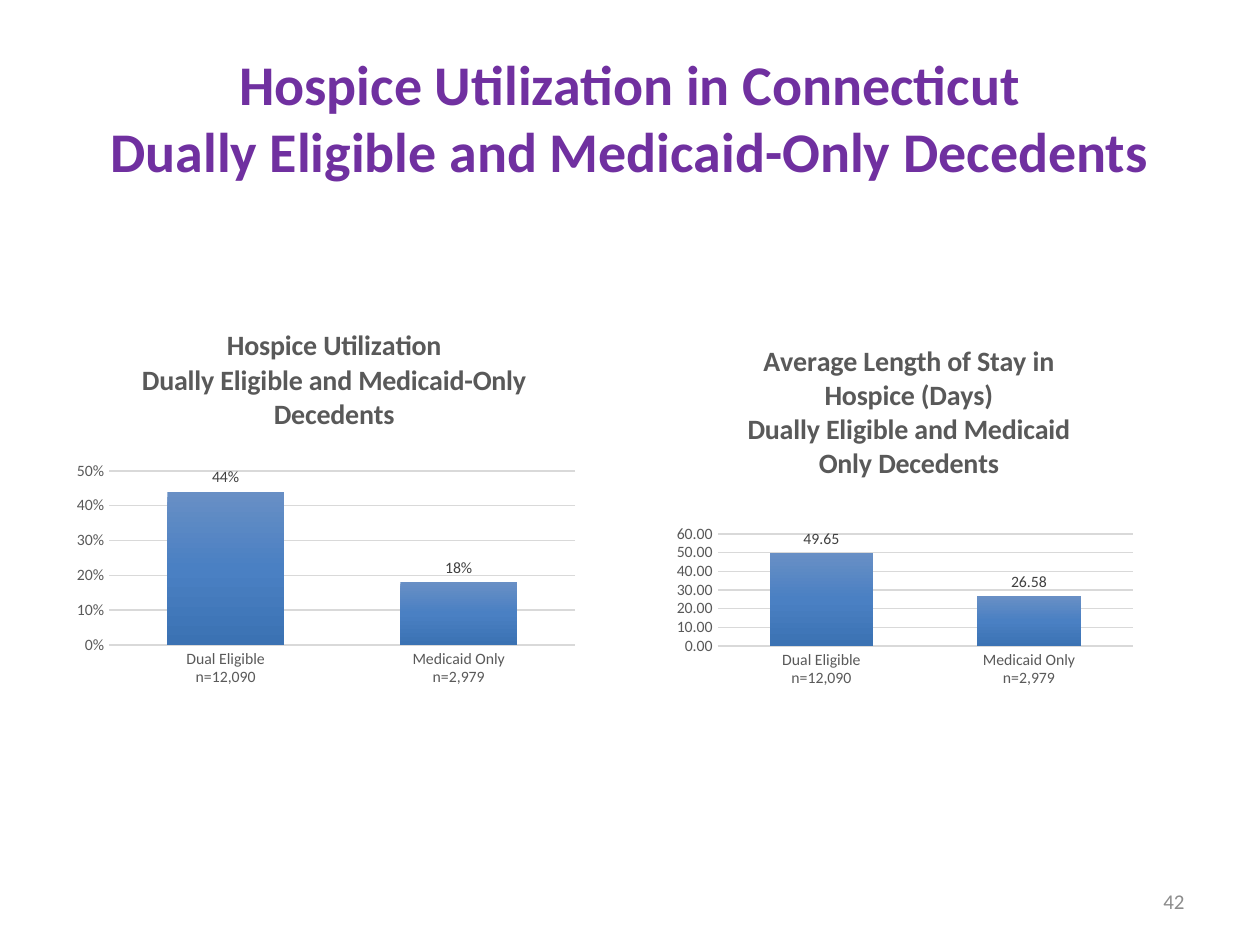
from dataclasses import dataclass
from typing import Any

import lxml.etree
import pptx
import pptx.chart.data
import pptx.dml.color
import pptx.enum.chart
import pptx.enum.text
import pptx.oxml
import pptx.oxml.ns
import pptx.util

FONT = "Calibri"
GRID_COLOUR = "D9D9D9"
AXIS_COLOUR = "595959"
CATEGORIES = ["Dual Eligible\nn=12,090", "Medicaid Only\nn=2,979"]
BAR_GRADIENT = [(0, "688FC5"), (50, "4A80C3"), (100, "3B72B3")]

Box = tuple[float, float, float, float]


@dataclass
class BarChart:
    box: Box  # points
    title: list[str]
    values: list[float]
    number_format: str
    maximum: float
    step: float
    title_place: dict[str, float]  # fractions of the chart
    plot_place: dict[str, float]


CHARTS = [
    BarChart((37.44, 166.32, 296.64, 231.12),
             ["Hospice Utilization", "Dually Eligible and Medicaid-Only Decedents"],
             [0.44, 0.18], "0%", 0.5, 0.1,
             {"x": 0.14, "y": 0.08}, {"x": 0.084, "y": 0.445, "w": 0.898, "h": 0.43}),
    BarChart((381.6, 182.88, 271.44, 214.56),
             ["Average Length of Stay in Hospice (Days)",
              "Dually Eligible and Medicaid Only Decedents"],
             [49.65, 26.58], "0.00", 60, 10,
             {"x": 0.16, "y": 0.05}, {"x": 0.105, "y": 0.57, "w": 0.874, "h": 0.298}),
]


def colour(value: str) -> pptx.dml.color.RGBColor:
    return pptx.dml.color.RGBColor.from_string(value)


def set_values(target: Any, values: dict[str, Any]) -> None:
    for name, value in values.items():
        setattr(target, name, value)


def set_font(font: Any, size: float, hex_colour: str, bold: bool = False) -> None:
    set_values(font, {"name": FONT, "size": pptx.util.Pt(size), "bold": bold})
    font.color.rgb = colour(hex_colour)


def points(box: Box) -> list[int]:
    return [pptx.util.Pt(length) for length in box]


def add_text(slide: Any, box: Box, text: str, alignment: Any, size: float,
             hex_colour: str, bold: bool = False) -> None:
    frame = slide.shapes.add_textbox(*points(box)).text_frame
    set_values(frame, {"word_wrap": True,
                       "vertical_anchor": pptx.enum.text.MSO_ANCHOR.MIDDLE})
    paragraph = frame.paragraphs[0]
    set_values(paragraph, {"text": text, "alignment": alignment})
    for run in paragraph.runs:
        set_font(run.font, size, hex_colour, bold)


def place(element: Any, index: int, fractions: dict[str, float], inner: bool = False) -> None:
    """Give a chart part a manual layout."""
    tag = pptx.oxml.ns.qn
    for old_layout in element.findall(tag("c:layout")):
        element.remove(old_layout)
    layout = lxml.etree.Element(tag("c:layout"))
    manual = lxml.etree.SubElement(layout, tag("c:manualLayout"))
    settings = [("layoutTarget", "inner")] if inner else []
    settings += [("xMode", "edge"), ("yMode", "edge")]
    settings += [(name, str(value)) for name, value in fractions.items()]
    for name, value in settings:
        lxml.etree.SubElement(manual, tag(f"c:{name}")).set("val", value)
    element.insert(index, layout)


def fill_gradient(series: Any) -> None:
    stops = "".join(f'<a:gs pos="{position * 1000}"><a:srgbClr val="{value}"/></a:gs>'
                    for position, value in BAR_GRADIENT)
    properties = series.format._element.get_or_add_spPr()
    properties.insert(0, pptx.oxml.parse_xml(
        f'<a:gradFill {pptx.oxml.ns.nsdecls("a")} rotWithShape="1"><a:gsLst>{stops}</a:gsLst>'
        '<a:lin ang="5400000" scaled="0"/></a:gradFill>'))


def add_bar_chart(slide: Any, item: BarChart) -> None:
    data = pptx.chart.data.CategoryChartData(number_format=item.number_format)
    data.categories = CATEGORIES
    data.add_series("Series 1", item.values)
    kind = pptx.enum.chart.XL_CHART_TYPE.COLUMN_CLUSTERED
    chart = slide.shapes.add_chart(kind, *points(item.box), data).chart
    set_values(chart, {"has_legend": False, "has_title": True})
    set_font(chart.font, 10, "000000")

    # Chart title
    frame = chart.chart_title.text_frame
    frame.text = "\n".join(item.title)
    for paragraph in frame.paragraphs:
        set_font(paragraph.font, 16, AXIS_COLOUR, True)
        for run in paragraph.runs:
            set_font(run.font, 16, AXIS_COLOUR, True)
    chart.chart_title.include_in_layout = False
    place(chart.chart_title._element, 1, item.title_place)

    # Axes
    no_tick = pptx.enum.chart.XL_TICK_MARK.NONE
    category_axis, value_axis = chart.category_axis, chart.value_axis
    for axis in (category_axis, value_axis):
        set_values(axis, {"major_tick_mark": no_tick, "minor_tick_mark": no_tick})
        set_font(axis.tick_labels.font, 9, AXIS_COLOUR)
    set_values(value_axis, {"minimum_scale": 0, "maximum_scale": item.maximum,
                            "major_unit": item.step, "has_major_gridlines": True})
    number_format = {"number_format": item.number_format, "number_format_is_linked": False}
    set_values(value_axis.tick_labels, number_format)
    value_axis.format.line.fill.background()
    for line, width in ((category_axis.format.line, 1),
                        (value_axis.major_gridlines.format.line, 0.75)):
        line.color.rgb = colour(GRID_COLOUR)
        line.width = pptx.util.Pt(width)

    # Bars and their labels
    plot = chart.plots[0]
    set_values(plot, {"gap_width": 100, "overlap": -24, "vary_by_categories": False})
    series = plot.series[0]
    series.invert_if_negative = False
    fill_gradient(series)
    labels = series.data_labels
    set_values(labels, {"show_value": True, **number_format,
                        "position": pptx.enum.chart.XL_LABEL_POSITION.OUTSIDE_END})
    set_font(labels.font, 9, "404040")
    place(chart._chartSpace.chart.plotArea, 0, item.plot_place, inner=True)


def main() -> None:
    presentation = pptx.Presentation()
    set_values(presentation, {"slide_width": pptx.util.Pt(720),
                              "slide_height": pptx.util.Pt(540)})
    slide = presentation.slides.add_slide(presentation.slide_layouts[6])
    align = pptx.enum.text.PP_ALIGN

    # Heading
    add_text(slide, (36, 21.6, 648, 90),
             "Hospice Utilization in Connecticut\vDually Eligible and Medicaid-Only Decedents",
             align.CENTER, 32, "7030A0", True)

    # Charts
    for item in CHARTS:
        add_bar_chart(slide, item)

    # Slide number
    add_text(slide, (516.24, 500.4, 167.76, 28.8), "42", align.RIGHT, 12, "8C8C8C")
    presentation.save("out.pptx")


if __name__ == "__main__":
    main()
